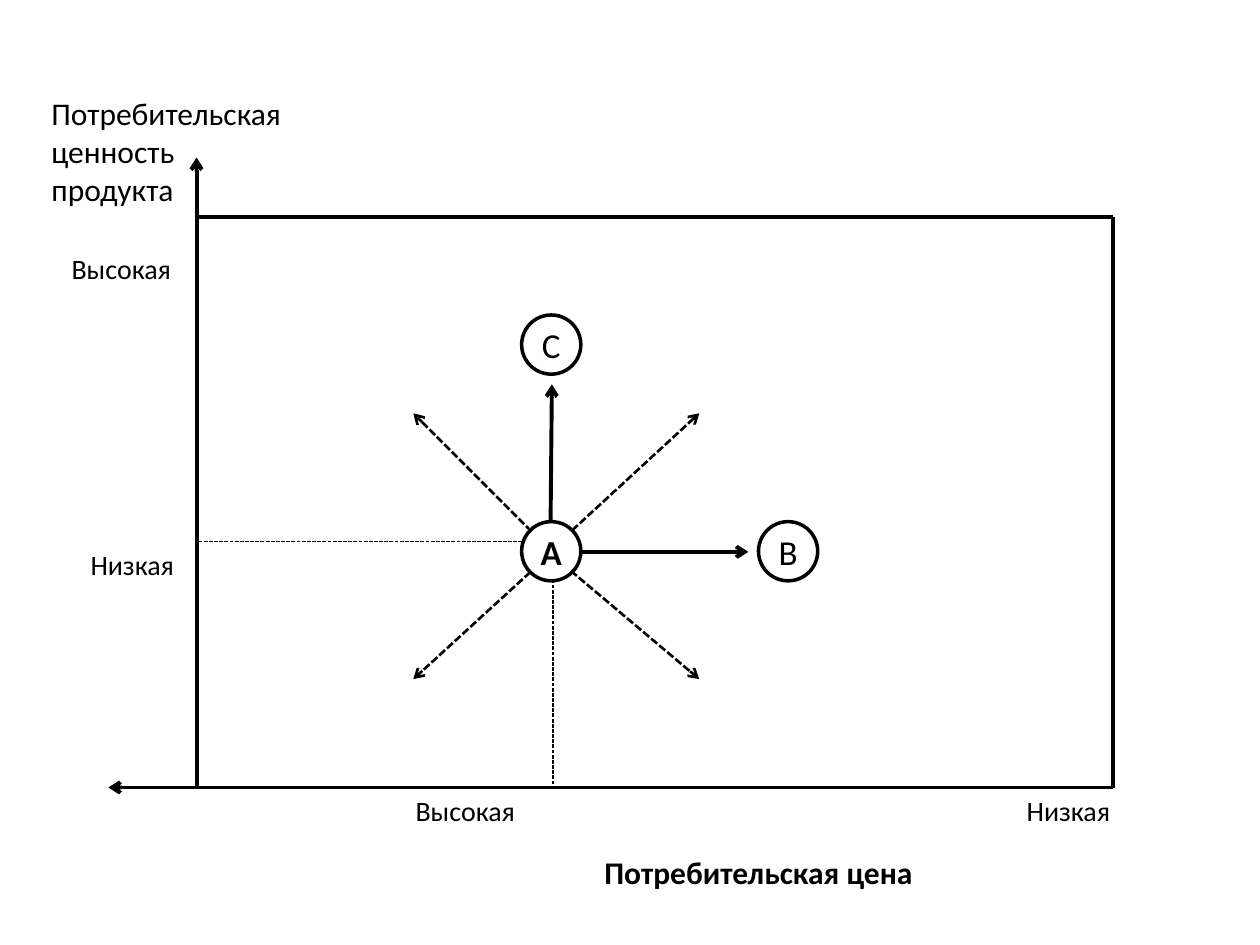
from typing import NamedTuple

from lxml.etree import SubElement
from pptx import Presentation
from pptx.dml.color import RGBColor
from pptx.enum.dml import MSO_LINE
from pptx.enum.shapes import MSO_CONNECTOR, MSO_SHAPE
from pptx.enum.text import MSO_ANCHOR, MSO_AUTO_SIZE, PP_ALIGN
from pptx.oxml.ns import qn
from pptx.util import Inches, Pt

COLORS = {"ink": "000000", "paper": "FFFFFF"}
FONT = "Calibri"
LEFT, RIGHT, TOP, BOTTOM = 1.56, 8.83, 1.72, 6.25
DIAMETER = 0.47


class Line(NamedTuple):
    x1: float
    y1: float
    x2: float
    y2: float
    arrow: bool = True
    width: float = 2.25
    dashed: bool = False


class Label(NamedTuple):
    text: str
    x: float
    y: float
    w: float
    h: float = 0.37
    size: int = 16
    bold: bool = False
    align: PP_ALIGN = PP_ALIGN.LEFT


class Node(NamedTuple):
    text: str
    x: float
    y: float
    bold: bool = False


FRAME = [
    Line(RIGHT, BOTTOM, 0.86, BOTTOM),
    Line(LEFT, BOTTOM, LEFT, 1.25),
    Line(LEFT, TOP, RIGHT, TOP, arrow=False),
    Line(RIGHT, BOTTOM, RIGHT, TOP, arrow=False),
]
LABELS = [
    Label("Потребительская ценность продукта", 0.31, 0.7, 2.19, 1.01, 18),
    Label("Высокая", 0.47, 1.95, 1.17),
    Label("Низкая", 0.62, 4.3, 1.09),
    Label("Высокая", 3.2, BOTTOM, 1.17),
    Label("Низкая", 8.05, BOTTOM, 1.09),
    Label("Потребительская цена", 3.83, 6.72, 4.38, 0.4, 18, True, PP_ALIGN.CENTER),
]
NODES = [
    Node("А", 4.14, 4.14, bold=True),
    Node("С", 4.14, 2.5),
    Node("В", 6.02, 4.14),
]
MOVES = [
    Line(4.37, 4.14, 4.38, 3.05),
    Line(4.61, 4.38, 5.94, 4.38),
    Line(4.54, 4.21, 5.55, 3.28, width=1.5, dashed=True),
    Line(4.22, 4.22, 3.28, 3.28, width=1.5, dashed=True),
    Line(4.21, 4.54, 3.28, 5.39, width=1.5, dashed=True),
    Line(4.53, 4.53, 5.55, 5.39, width=1.5, dashed=True),
]
GUIDE = Line(5.39, BOTTOM, LEFT, 4.3, arrow=False, width=0.75, dashed=True)
GUIDE_BEND = 0.261


def rgb(name: str) -> RGBColor:
    return RGBColor.from_string(COLORS[name])


def add_line(s, line: Line, kind=MSO_CONNECTOR.STRAIGHT):
    ends = (Inches(v) for v in line[:4])
    cxn = s.shapes.add_connector(kind, *ends)
    cxn.line.color.rgb = rgb("ink")
    cxn.line.width = Pt(line.width)
    if line.dashed:
        cxn.line.dash_style = MSO_LINE.SQUARE_DOT
    if line.arrow:
        SubElement(cxn.line._get_or_add_ln(), qn("a:tailEnd"), type="arrow")
    SubElement(cxn._element.spPr, qn("a:effectLst"))
    return cxn


def add_guide(s, line: Line, bend: float) -> None:
    """Draw an elbow line that turns at the given share of its width."""
    cxn = add_line(s, line, MSO_CONNECTOR.ELBOW)
    geom = cxn._element.spPr.find(qn("a:prstGeom"))
    adjustments = geom.find(qn("a:avLst"))
    if adjustments is None:
        adjustments = SubElement(geom, qn("a:avLst"))
    SubElement(adjustments, qn("a:gd"), name="adj1", fmla=f"val {round(bend * 100000)}")


def add_run(p, text: str, size: int, bold: bool) -> None:
    r = p.add_run()
    r.text = text
    r.font.name = FONT
    r.font.size = Pt(size)
    r.font.bold = bold
    r.font.color.rgb = rgb("ink")


def add_label(s, label: Label) -> None:
    box = (Inches(v) for v in (label.x, label.y, label.w, label.h))
    tf = s.shapes.add_textbox(*box).text_frame
    tf.word_wrap = True
    tf.auto_size = MSO_AUTO_SIZE.SHAPE_TO_FIT_TEXT
    p = tf.paragraphs[0]
    p.alignment = label.align
    add_run(p, label.text, label.size, label.bold)


def add_node(s, node: Node) -> None:
    box = (Inches(v) for v in (node.x, node.y, DIAMETER, DIAMETER))
    sp = s.shapes.add_shape(MSO_SHAPE.OVAL, *box)
    sp.shadow.inherit = False
    sp.fill.solid()
    sp.fill.fore_color.rgb = rgb("paper")
    sp.line.color.rgb = rgb("ink")
    sp.line.width = Pt(2)
    tf = sp.text_frame
    tf.word_wrap = False
    tf.margin_left = tf.margin_right = tf.margin_top = tf.margin_bottom = 0
    tf.vertical_anchor = MSO_ANCHOR.MIDDLE
    p = tf.paragraphs[0]
    p.alignment = PP_ALIGN.CENTER
    add_run(p, node.text, 20, node.bold)


def main() -> None:
    prs = Presentation()
    prs.slide_width, prs.slide_height = Inches(10), Inches(7.5)
    s = prs.slides.add_slide(prs.slide_layouts[6])
    for line in FRAME:
        add_line(s, line)
    for label in LABELS:
        add_label(s, label)
    add_guide(s, GUIDE, GUIDE_BEND)
    for node in NODES:
        add_node(s, node)
    for line in MOVES:
        add_line(s, line)
    prs.save("out.pptx")


if __name__ == "__main__":
    main()
